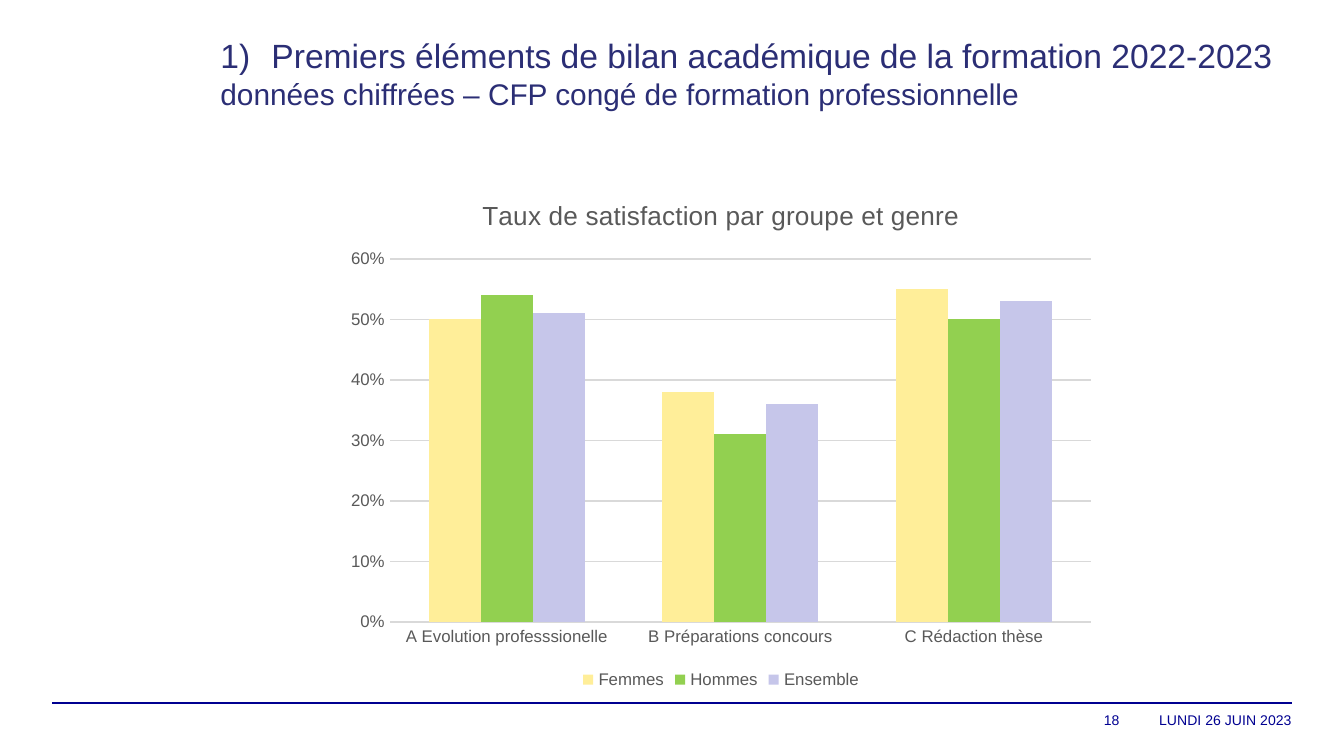
from lxml import etree
from pptx import Presentation
from pptx.chart.data import CategoryChartData
from pptx.dml.color import RGBColor
from pptx.enum.chart import XL_CHART_TYPE, XL_LEGEND_POSITION, XL_TICK_MARK
from pptx.enum.shapes import MSO_CONNECTOR
from pptx.enum.text import MSO_ANCHOR, MSO_AUTO_SIZE, PP_ALIGN
from pptx.oxml.ns import qn
from pptx.util import Inches, Pt

COLUMN = XL_CHART_TYPE.COLUMN_CLUSTERED
BOTTOM = XL_LEGEND_POSITION.BOTTOM
NO_TICK = XL_TICK_MARK.NONE
STRAIGHT = MSO_CONNECTOR.STRAIGHT
TOP, MIDDLE = MSO_ANCHOR.TOP, MSO_ANCHOR.MIDDLE
FIXED = MSO_AUTO_SIZE.NONE
LEFT, RIGHT = PP_ALIGN.LEFT, PP_ALIGN.RIGHT

FACE = "Arial"
NAVY, INDIGO, GREY, PALE = "000091", "2B2E75", "595959", "D9D9D9"
GROUPS = ["A Evolution professsionelle", "B Préparations concours", "C Rédaction thèse"]
RATES = [
    ("Femmes", (0.5, 0.38, 0.55), "FFEE99"),
    ("Hommes", (0.54, 0.31, 0.5), "92D050"),
    ("Ensemble", (0.51, 0.36, 0.53), "C6C6EA"),
]


def color(code):
    return RGBColor.from_string(code)


def style(font, size, code):
    font.name = FACE
    font.size = Pt(size)
    font.bold = False
    font.color.rgb = color(code)


def add_title(slide, left, top, width, height):
    title = slide.shapes.title
    title.left, title.top = Inches(left), Inches(top)
    title.width, title.height = Inches(width), Inches(height)
    frame = title.text_frame
    frame.word_wrap = True
    frame.auto_size = FIXED
    frame.vertical_anchor = TOP
    frame.text = (
        "Premiers éléments de bilan académique de la formation 2022-2023\n"
        "données chiffrées – CFP congé de formation professionnelle"
    )
    head = frame.paragraphs[0]
    props = head._p.get_or_add_pPr()
    props.set("marL", str(Inches(0.38)))
    props.set("indent", str(Inches(-0.38)))
    etree.SubElement(props, qn("a:buFont"), typeface="+mj-lt")
    etree.SubElement(props, qn("a:buAutoNum"), type="arabicParenR")
    for para, size in zip(frame.paragraphs, (18, 16)):
        para.alignment = LEFT
        style(para.font, size, INDIGO)


def place_plot(chart, x, y, width, height):
    area = chart._chartSpace.chart.plotArea
    for old in area.findall(qn("c:layout")):
        area.remove(old)
    layout = etree.Element(qn("c:layout"))
    manual = etree.SubElement(layout, qn("c:manualLayout"))
    for tag, value in (
        ("layoutTarget", "inner"), ("xMode", "edge"), ("yMode", "edge"),
        ("x", x), ("y", y), ("w", width), ("h", height),
    ):
        etree.SubElement(manual, qn("c:" + tag), val=str(value))
    area.insert(0, layout)


def add_rates(slide, left, top, width, height):
    data = CategoryChartData(number_format="0%")
    data.categories = GROUPS
    for name, values, code in RATES:
        data.add_series(name, values)
    chart = slide.shapes.add_chart(
        COLUMN, Inches(left), Inches(top), Inches(width), Inches(height), data
    ).chart
    style(chart.font, 10, "000000")
    chart.has_title = True
    frame = chart.chart_title.text_frame
    frame.text = "Taux de satisfaction par groupe et genre"
    style(frame.paragraphs[0].font, 14, GREY)
    chart.chart_title.include_in_layout = False
    chart.has_legend = True
    chart.legend.position = BOTTOM
    chart.legend.include_in_layout = False
    style(chart.legend.font, 9, GREY)

    plot = chart.plots[0]
    plot.gap_width = 150
    plot.overlap = 0
    plot.vary_by_categories = False
    for series, (name, values, code) in zip(plot.series, RATES):
        series.format.fill.solid()
        series.format.fill.fore_color.rgb = color(code)

    for axis in (chart.category_axis, chart.value_axis):
        axis.major_tick_mark = axis.minor_tick_mark = NO_TICK
        style(axis.tick_labels.font, 9, GREY)
        axis.format.line.fill.background()
    scale = chart.value_axis
    scale.minimum_scale, scale.maximum_scale, scale.major_unit = 0, 0.6, 0.1
    scale.tick_labels.number_format = "0%"
    scale.tick_labels.number_format_is_linked = False
    grid = scale.major_gridlines.format.line
    grid.color.rgb = color(PALE)
    grid.width = Pt(0.75)
    place_plot(chart, 0.07, 0.16, 0.91, 0.7)


def add_footer(slide, left, top, width, height):
    right = left + width
    rule = slide.shapes.add_connector(
        STRAIGHT, Inches(left), Inches(top), Inches(right), Inches(top)
    )
    rule.line.color.rgb = color(NAVY)
    rule.line.width = Pt(0.8)
    etree.SubElement(rule._element.spPr, qn("a:effectLst"))
    for text, span in (("LUNDI 26 JUIN 2023", 1.28), ("18", 1.48)):
        right -= span
        box = slide.shapes.add_textbox(
            Inches(right), Inches(top), Inches(span), Inches(height)
        )
        frame = box.text_frame
        frame.word_wrap = True
        frame.vertical_anchor = MIDDLE
        frame.margin_left = frame.margin_right = 0
        frame.margin_top = frame.margin_bottom = 0
        frame.text = text
        para = frame.paragraphs[0]
        para.alignment = RIGHT
        style(para.font, 7.5, NAVY)


def main():
    deck = Presentation()
    deck.slide_width = Inches(10)
    deck.slide_height = deck.slide_width * 9 // 16
    slide = deck.slides.add_slide(deck.slide_layouts[5])
    add_footer(slide, 0.39, 5.23, 9.22, 0.26)
    add_title(slide, 1.54, 0.21, 8.07, 1.55)
    add_rates(slide, 2.5, 1.31, 5.73, 3.86)
    deck.save("out.pptx")


if __name__ == "__main__":
    main()
